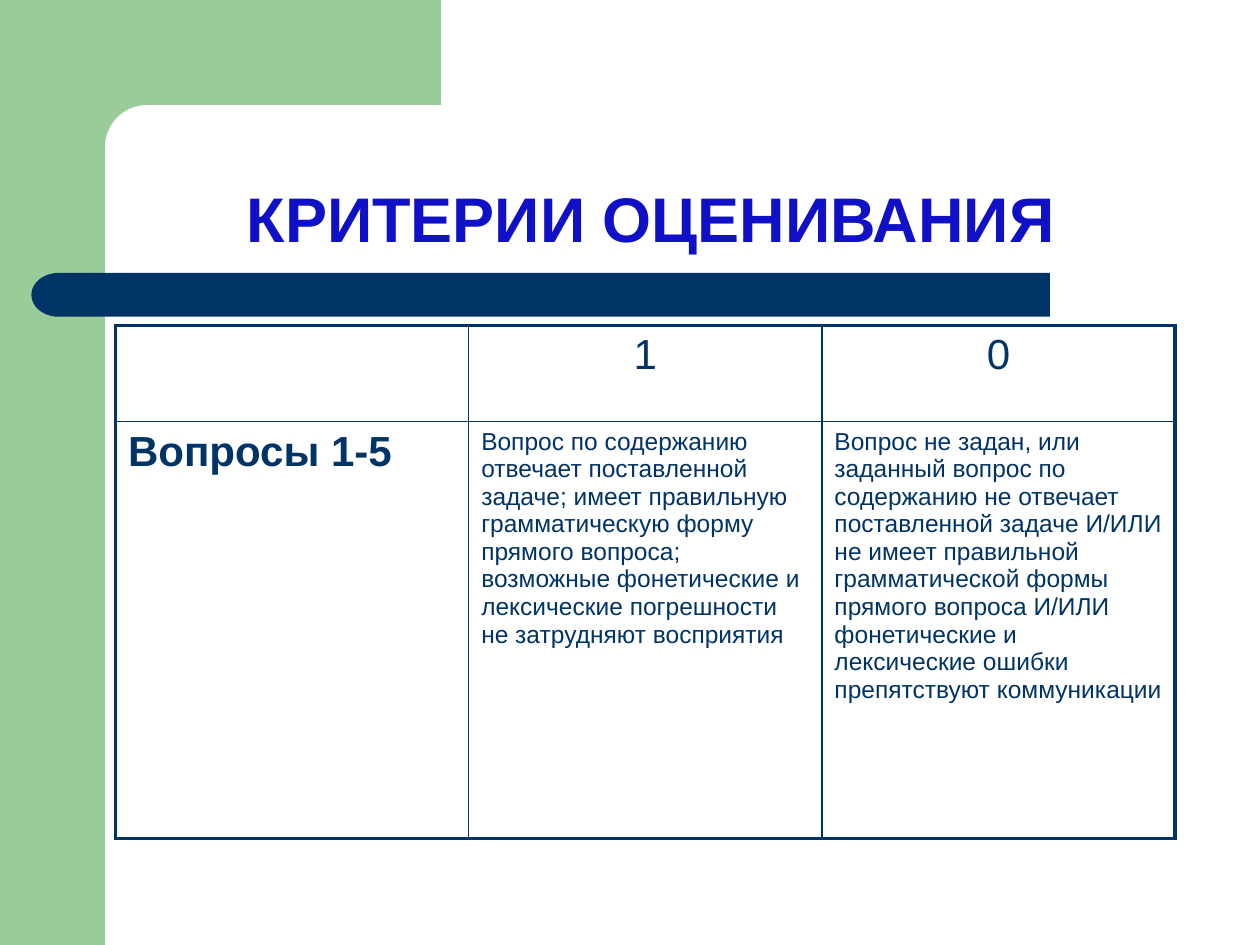
from math import cos, pi, sin

from lxml.etree import SubElement
from pptx import Presentation
from pptx.dml.color import RGBColor as Rgb
from pptx.enum.shapes import MSO_SHAPE as Kind
from pptx.enum.text import MSO_ANCHOR as Anchor, PP_ALIGN as Align
from pptx.oxml.ns import qn
from pptx.util import Pt

HUES = {"green": "99CC99", "navy": "003366", "blue": "1010C6"}
FONT = "Arial"
ROWS = [
    ["", "1", "0"],
    [
        "Вопросы 1-5",
        "Вопрос по содержанию отвечает поставленной задаче; имеет правильную "
        "грамматическую форму прямого вопроса; возможные фонетические и "
        "лексические погрешности не затрудняют восприятия",
        "Вопрос не задан, или заданный вопрос по содержанию не отвечает "
        "поставленной задаче И/ИЛИ не имеет правильной грамматической формы "
        "прямого вопроса И/ИЛИ фонетические и лексические ошибки "
        "препятствуют коммуникации",
    ],
]


def paint(shape, hue):
    shape.shadow.inherit = False
    shape.fill.solid()
    shape.fill.fore_color.rgb = Rgb.from_string(HUES[hue])
    shape.line.fill.background()


def style(para, size, hue, bold=False):
    for run in para.runs:
        font = run.font
        font.name, font.size, font.bold = FONT, Pt(size), bold
        font.color.rgb = Rgb.from_string(HUES[hue])


def add_frame(slide, x, y, wide, high):
    """Green side band and top block joined by a rounded inner corner."""
    band, rad = 60, 24
    side = slide.shapes.add_shape(Kind.RECTANGLE, Pt(x), Pt(y), Pt(band), Pt(high))
    paint(side, "green")

    mid = band + rad
    turns = [pi / 2 * i / 16 for i in range(17)]
    arc = [(x + mid - rad * sin(t), y + mid - rad * cos(t)) for t in turns]
    left, low = x + 36, y + 92
    dots = [(x + wide, y + band), *arc, (x + band, low), (left, low), (left, y)]
    pen = slide.shapes.build_freeform(Pt(x + wide), Pt(y))
    pen.add_line_segments([(Pt(a), Pt(b)) for a, b in dots], close=True)
    paint(pen.convert_to_shape(), "green")


def add_bar(slide, x, y, wide, high):
    """Navy bar with a round left end."""
    cap = 30.5
    bar = slide.shapes.add_shape(
        Kind.RECTANGLE, Pt(x + cap), Pt(y), Pt(wide - cap), Pt(high))
    end = slide.shapes.add_shape(
        Kind.FLOWCHART_DELAY, Pt(x), Pt(y), Pt(cap + 0.5), Pt(high))
    end.element.spPr.xfrm.set("flipH", "1")
    for part in (bar, end):
        paint(part, "navy")


def add_title(slide, x, y, wide, high):
    title = slide.shapes.title
    title.left, title.top, title.width, title.height = map(Pt, (x, y, wide, high))
    frame = title.text_frame
    frame.text = "КРИТЕРИИ ОЦЕНИВАНИЯ"
    frame.vertical_anchor = Anchor.BOTTOM
    para = frame.paragraphs[0]
    para.alignment, para.line_spacing = Align.CENTER, 0.9
    style(para, 36, "blue", True)


def edge(cell, side, width):
    line = SubElement(cell._tc.get_or_add_tcPr(), qn(f"a:ln{side}"), w=str(Pt(width)))
    fill = SubElement(line, qn("a:solidFill"))
    SubElement(fill, qn("a:srgbClr"), val=HUES["navy"])


def add_grid(slide, x, y, wide, highs):
    """Criteria table: thick outer border, thin inner lines."""
    count, last = len(ROWS), len(ROWS[0]) - 1
    grid = slide.shapes.add_table(
        count, last + 1, Pt(x), Pt(y), Pt(wide), Pt(sum(highs))).table
    grid.first_row = grid.horz_banding = False
    for col in grid.columns:
        col.width = Pt(wide / (last + 1))
    for r, (high, row) in enumerate(zip(highs, ROWS)):
        grid.rows[r].height = Pt(high)
        for c, text in enumerate(row):
            cell = grid.cell(r, c)
            outer = {"L": c == 0, "R": c == last, "T": r == 0, "B": r == count - 1}
            for side, thick in outer.items():
                edge(cell, side, 2.25 if thick else 1)
            cell.fill.background()
            cell.text = text
            para = cell.text_frame.paragraphs[0]
            para.alignment = Align.CENTER if r == 0 else Align.LEFT
            label = r == 0 or c == 0
            style(para, 24 if label else 14, "navy", r > 0 and c == 0)


def main():
    deck = Presentation()
    deck.slide_width, deck.slide_height = Pt(720), Pt(540)
    slide = deck.slides.add_slide(deck.slide_layouts[5])
    add_frame(slide, 0, 0, 252, 540)
    add_bar(slide, 18, 156, 582, 25)
    add_title(slide, 60, 60, 624, 90)
    add_grid(slide, 66, 186, 605.5, (55, 238))
    deck.save("out.pptx")


if __name__ == "__main__":
    main()
